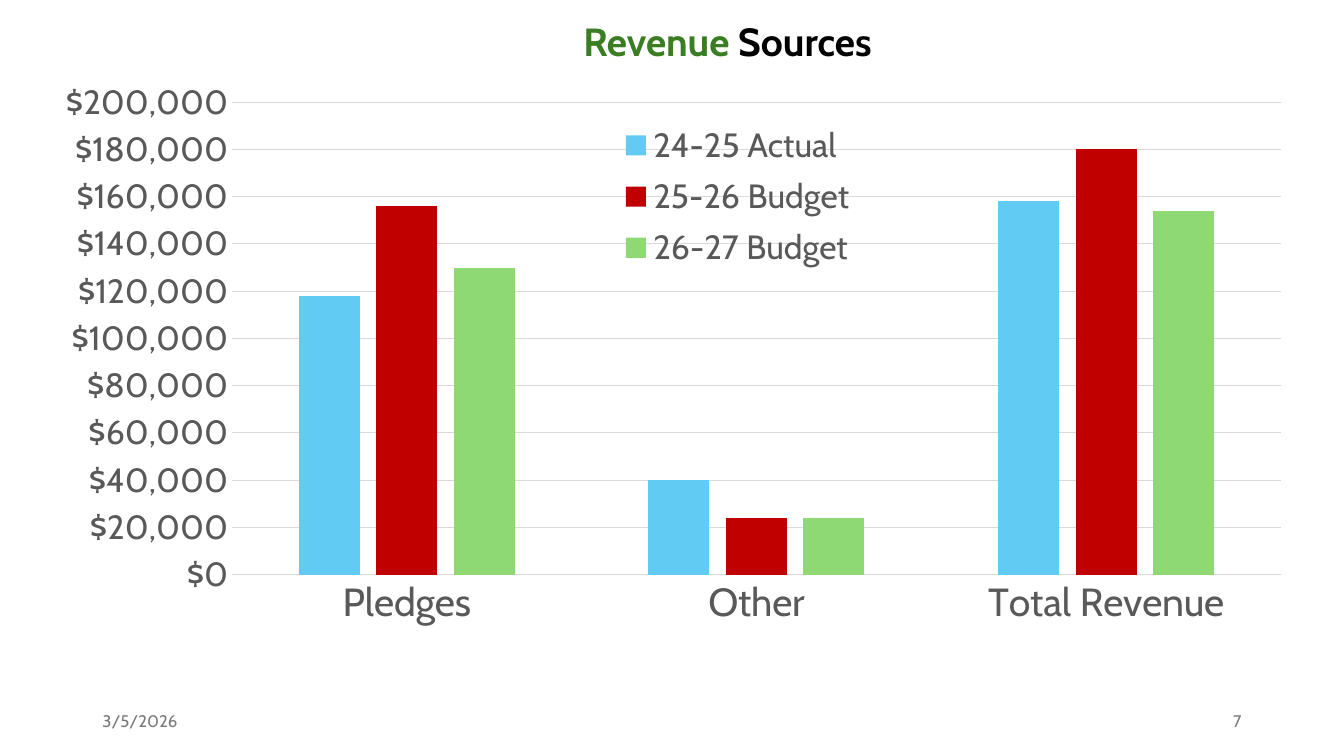
from dataclasses import dataclass

from lxml import etree
from pptx import Presentation
from pptx.chart.data import CategoryChartData
from pptx.dml.color import RGBColor
from pptx.enum.chart import XL_CHART_TYPE, XL_LEGEND_POSITION, XL_TICK_MARK
from pptx.enum.text import MSO_ANCHOR, PP_ALIGN
from pptx.oxml.ns import qn
from pptx.util import Cm, Pt

COLUMNS = XL_CHART_TYPE.COLUMN_CLUSTERED
LEGEND_BOTTOM = XL_LEGEND_POSITION.BOTTOM
NO_TICK = XL_TICK_MARK.NONE
TOP, MIDDLE = MSO_ANCHOR.TOP, MSO_ANCHOR.MIDDLE
LEFT, RIGHT = PP_ALIGN.LEFT, PP_ALIGN.RIGHT


@dataclass(frozen=True)
class Theme:
    font: str = "Cabin"
    green: str = "3B7D23"
    black: str = "000000"
    footer: str = "797979"
    label: str = "595959"
    grid: str = "D9D9D9"
    series: tuple = ("61CBF4", "C00000", "8ED973")
    title_size: int = 28
    category_size: int = 28
    value_size: int = 24
    footer_size: int = 12
    line_width: float = 0.75


def place(parent, index, inner=False, **fractions):
    """Set a manual layout, in fractions of the chart frame."""
    for old in parent.findall(qn("c:layout")):
        parent.remove(old)
    layout = etree.Element(qn("c:layout"))
    manual = etree.SubElement(layout, qn("c:manualLayout"))
    settings = {"layoutTarget": "inner"} if inner else {}
    settings |= {"xMode": "edge", "yMode": "edge", **fractions}
    for name, value in settings.items():
        etree.SubElement(manual, qn(f"c:{name}")).set("val", str(value))
    parent.insert(index, layout)


class SlideBuilder:
    def __init__(self, page, theme):
        self.page = page
        self.theme = theme

    def style(self, font, size, color, bold=False):
        font.name = self.theme.font
        font.size = Pt(size)
        font.bold = bold
        font.color.rgb = RGBColor.from_string(color)

    def line(self, line):
        line.color.rgb = RGBColor.from_string(self.theme.grid)
        line.width = Pt(self.theme.line_width)

    def text(self, frame, spans, size, bold=False, wrap=True,
             anchor=MIDDLE, align=LEFT):
        box = self.page.shapes.add_textbox(*map(Cm, frame))
        box.text_frame.word_wrap = wrap
        box.text_frame.vertical_anchor = anchor
        para = box.text_frame.paragraphs[0]
        para.alignment = align
        for words, color in spans:
            span = para.add_run()
            span.text = words
            self.style(span.font, size, color, bold)

    def column_chart(self, frame, categories, series):
        theme = self.theme
        data = CategoryChartData(number_format='"$"#,##0')
        data.categories = categories
        for name, values in series.items():
            data.add_series(name, values)
        chart = self.page.shapes.add_chart(COLUMNS, *map(Cm, frame), data).chart
        chart.has_title = False
        self.style(chart.font, theme.value_size, theme.label)

        # Columns
        plot = chart.plots[0]
        plot.vary_by_categories = False
        plot.gap_width = 219
        plot.overlap = -27
        for column, color in zip(plot.series, theme.series):
            column.format.fill.solid()
            column.format.fill.fore_color.rgb = RGBColor.from_string(color)
        place(chart._chartSpace.chart.plotArea, 0, inner=True,
              x=0.15, y=0.05, w=0.83, h=0.75)

        # Axes
        names, amounts = chart.category_axis, chart.value_axis
        for axis, size in ((names, theme.category_size),
                           (amounts, theme.value_size)):
            axis.major_tick_mark = axis.minor_tick_mark = NO_TICK
            self.style(axis.tick_labels.font, size, theme.label)
        self.line(names.format.line)
        amounts.format.line.fill.background()
        self.line(amounts.major_gridlines.format.line)
        amounts.minimum_scale, amounts.maximum_scale = 0, 200000
        amounts.major_unit = 20000
        amounts.tick_labels.number_format = '"$"#,##0'
        amounts.tick_labels.number_format_is_linked = False

        # Legend over the plot
        chart.has_legend = True
        legend = chart.legend
        legend.position = LEGEND_BOTTOM
        legend.include_in_layout = False
        self.style(legend.font, theme.value_size, theme.label)
        place(legend._element, 1, x=0.45, y=0.07, w=0.2, h=0.26)


def main():
    deck = Presentation()
    deck.slide_width, deck.slide_height = Cm(33.87), Cm(19.05)
    theme = Theme()
    builder = SlideBuilder(deck.slides.add_slide(deck.slide_layouts[6]), theme)

    # Footer: date and page number
    for left, words, align in ((2.33, "3/5/2026", LEFT), (23.92, "7", RIGHT)):
        builder.text((left, 17.66, 7.62, 1.01), [(words, theme.footer)],
                     theme.footer_size, align=align)

    # Revenue by source and year
    builder.column_chart(
        (1.07, 1.78, 31.85, 15.88),
        ("Pledges", "Other", "Total Revenue"),
        {
            "24-25 Actual": (118000, 40000, 158000),
            "25-26 Budget": (156000, 24000, 180000),
            "26-27 Budget": (130000, 24000, 154000),
        },
    )

    # Title
    builder.text((14.45, 0.3, 8.38, 1.45),
                 [("Revenue", theme.green), (" Sources", theme.black)],
                 theme.title_size, bold=True, wrap=False, anchor=TOP)

    deck.save("out.pptx")


if __name__ == "__main__":
    main()
